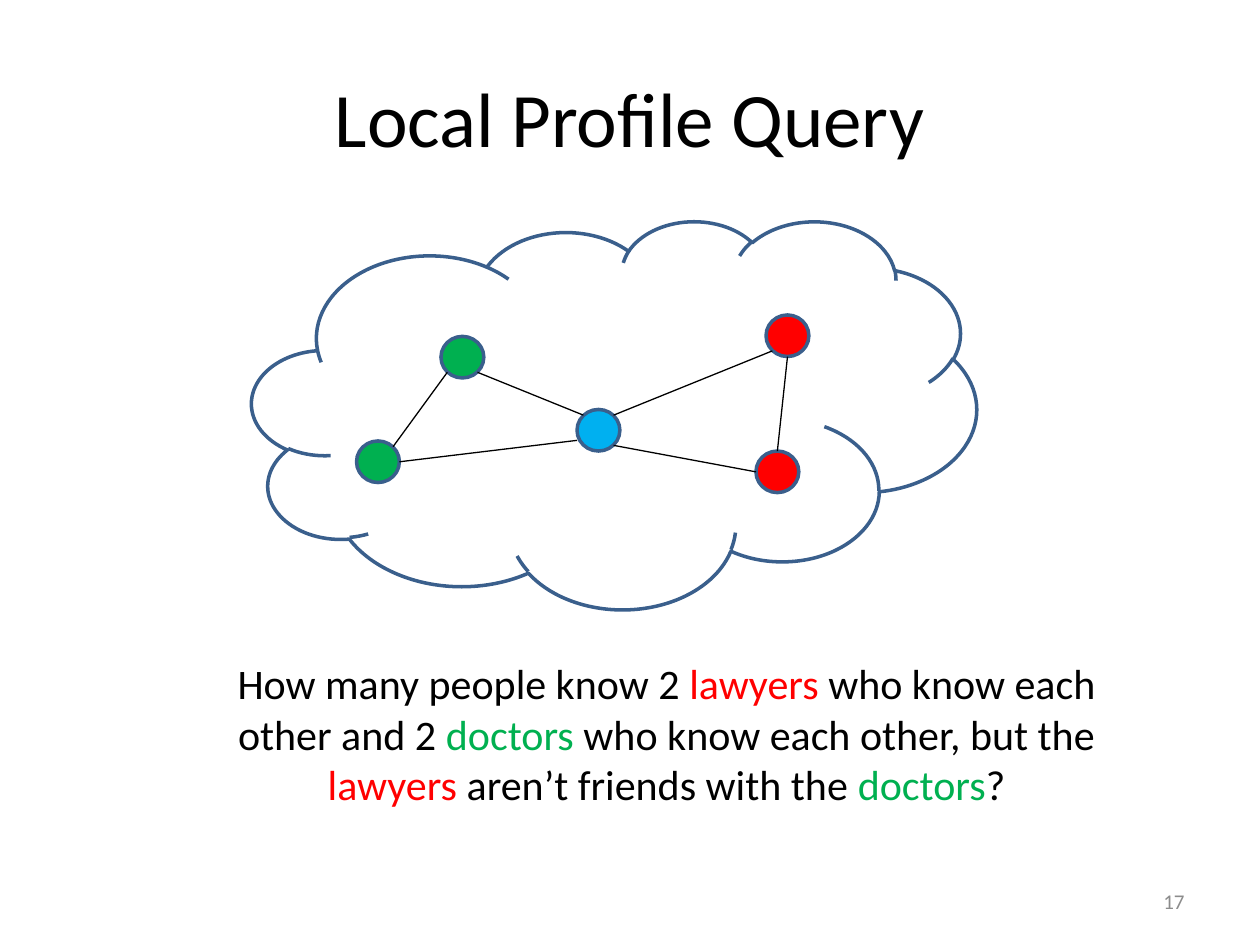
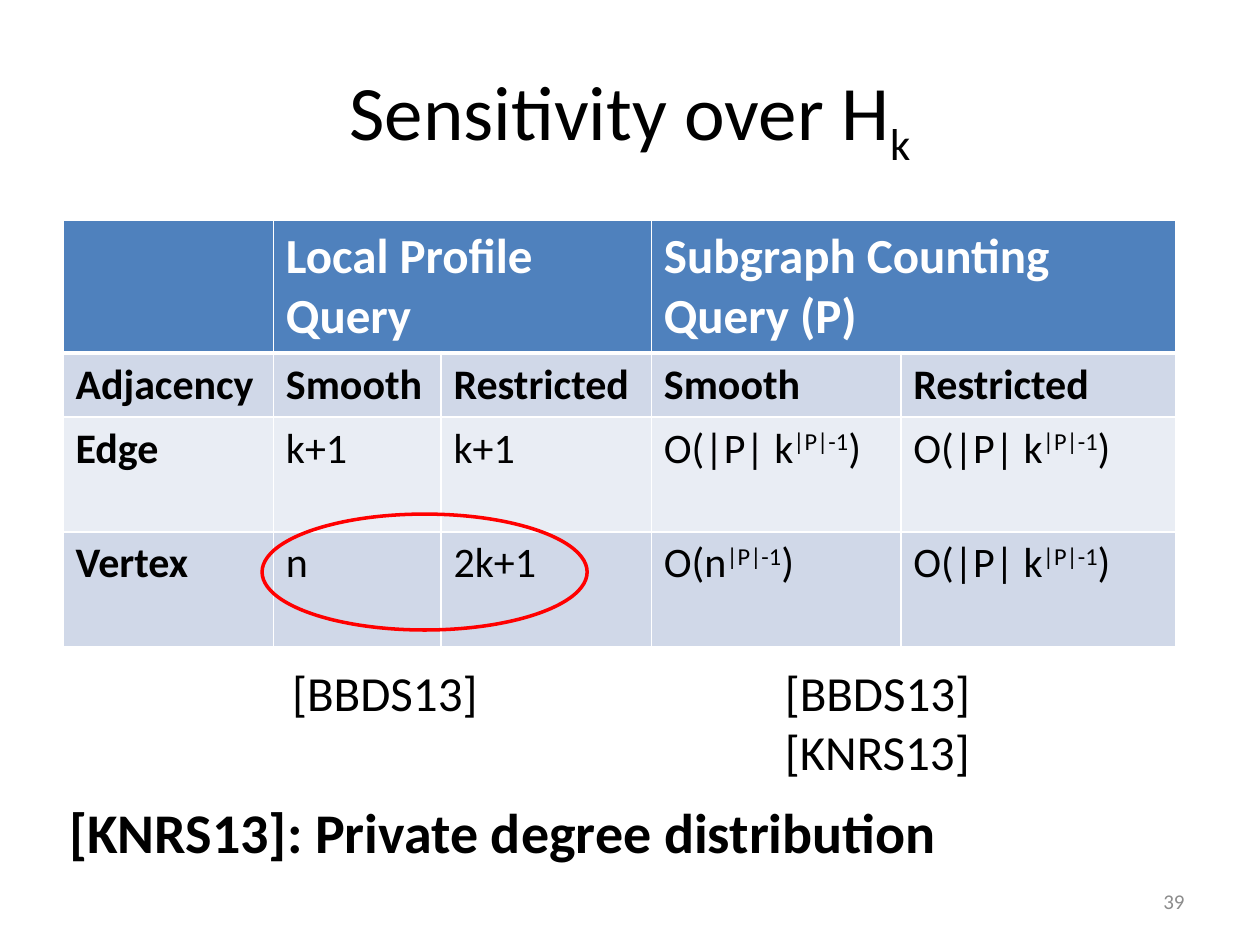
from dataclasses import dataclass

from lxml.etree import SubElement
from pptx import Presentation
from pptx.dml.color import RGBColor
from pptx.enum.shapes import MSO_CONNECTOR as CONN, MSO_SHAPE as SHAPE
from pptx.enum.text import MSO_ANCHOR as ANCHOR, MSO_AUTO_SIZE as FIT, PP_ALIGN as ALIGN
from pptx.oxml.ns import qn
from pptx.util import Pt

EMU_PER_PX = 9144


def px(n):
    return int(n * EMU_PER_PX)


@dataclass(frozen=True)
class Theme:
    font: str = "Calibri"
    black: str = "000000"
    white: str = "FFFFFF"
    red: str = "FF0000"
    green: str = "00B050"
    sky: str = "00B0F0"
    outline: str = "3A5F8C"
    grey: str = "8C8C8C"
    header: str = "4F81BD"
    band_dark: str = "D0D8E8"
    band_light: str = "E9EDF4"
    title: int = 44
    takeaway: int = 32
    large: int = 28
    body: int = 24
    small: int = 12
    shape_line: float = 2
    edge_line: float = 0.75


class Deck:
    def __init__(self, theme):
        self.theme = theme
        self.prs = Presentation()
        self.prs.slide_width, self.prs.slide_height = px(1000), px(750)
        self.slide = None

    def add_runs(self, p, runs, size, color=None, bold=False, align=ALIGN.LEFT):
        p.alignment = align
        for text, style in [(runs, {})] if isinstance(runs, str) else runs:
            r = p.add_run()
            r.text = text
            formats = {"name": self.theme.font, "size": Pt(size), "bold": bold}
            for name, value in formats.items():
                setattr(r.font, name, value)
            r.font.color.rgb = RGBColor.from_string(style.get("color", color or self.theme.black))
            if "base" in style:
                r._r.get_or_add_rPr().set("baseline", str(style["base"] * 1000))

    def add_slide(self, title, number):
        self.slide = self.prs.slides.add_slide(self.prs.slide_layouts[5])
        sp = self.slide.shapes.title
        for name, value in dict(left=50, top=30, width=900, height=125).items():
            setattr(sp, name, px(value))
        sp.text_frame.vertical_anchor = ANCHOR.MIDDLE
        self.add_runs(sp.text_frame.paragraphs[0], title, self.theme.title, align=ALIGN.CENTER)
        self.text((717, 695, 233, 40), [str(number)], self.theme.small, anchor=ANCHOR.MIDDLE,
                  fit=FIT.NONE, color=self.theme.grey, align=ALIGN.RIGHT)

    def text(self, box, lines, size, wrap=True, anchor=ANCHOR.TOP,
             fit=FIT.SHAPE_TO_FIT_TEXT, **style):
        tf = self.slide.shapes.add_textbox(*map(px, box)).text_frame
        for name, value in dict(word_wrap=wrap, auto_size=fit, vertical_anchor=anchor).items():
            setattr(tf, name, value)
        for i, line in enumerate(lines):
            p = tf.add_paragraph() if i else tf.paragraphs[0]
            self.add_runs(p, line, size, **style)

    def shape(self, kind, box, line, fill=None):
        s = self.slide.shapes.add_shape(kind, *map(px, box))
        s.shadow.inherit = False
        if fill:
            s.fill.solid()
            s.fill.fore_color.rgb = RGBColor.from_string(fill)
        else:
            s.fill.background()
        s.line.color.rgb = RGBColor.from_string(line)
        s.line.width = Pt(self.theme.shape_line)

    def line(self, start, end):
        c = self.slide.shapes.add_connector(CONN.STRAIGHT, *map(px, start + end))
        c.line.color.rgb = RGBColor.from_string(self.theme.black)
        c.line.width = Pt(self.theme.edge_line)
        SubElement(c._element.spPr, qn("a:effectLst"))

    def cell(self, cell, fill, borders):
        tcPr = cell._tc.get_or_add_tcPr()
        for side, width in borders.items():
            ln = SubElement(tcPr, qn(f"a:ln{side}"), w=str(int(Pt(width))))
            solid = SubElement(ln, qn("a:solidFill"))
            SubElement(solid, qn("a:srgbClr"), val=self.theme.white)
        cell.fill.solid()
        cell.fill.fore_color.rgb = RGBColor.from_string(fill)

    def table(self, left, top, widths, heights, rows, merges):
        t = self.theme
        box = (left, top, sum(widths), sum(heights))
        table = self.slide.shapes.add_table(len(rows), len(widths), *map(px, box)).table
        for col, width in zip(table.columns, widths):
            col.width = px(width)
        for row, height in zip(table.rows, heights):
            row.height = px(height)
        for i, row in enumerate(rows):
            fill = t.header if i == 0 else t.band_dark if i % 2 else t.band_light
            borders = {"L": 1, "R": 1, "T": 3 if i == 1 else 1, "B": 1 if i else 3}
            for j, runs in enumerate(row):
                cell = table.cell(i, j)
                self.cell(cell, fill, borders)
                if runs:
                    self.add_runs(cell.text_frame.paragraphs[0], runs, t.body if i else t.large,
                                  color=t.black if i else t.white, bold=i < 2 or j == 0)
        for first, last in merges:
            table.cell(*first).merge(table.cell(*last))


def local_profile(deck):
    t = deck.theme
    deck.add_slide("Local Profile Query", 17)
    deck.shape(SHAPE.CLOUD, (200, 175, 575, 308), t.outline, t.white)

    width, height = 34, 33
    nodes = {
        "lawyer_low": (600, 358, t.red),
        "lawyer_high": (608, 250, t.red),
        "person": (458, 325, t.sky),
        "doctor_high": (350, 267, t.green),
        "doctor_low": (283, 350, t.green),
    }
    ports = {
        "top": (0, -16.5), "bottom": (0, 16.5), "left": (-17, 0), "right": (17, 0),
        "top_left": (-12, -12), "top_right": (12, -12),
        "bottom_left": (-12, 12), "bottom_right": (12, 12), "lower_left": (-17, 8),
    }
    edges = [
        ("person", "top_right", "lawyer_high", "bottom_left"),
        ("person", "bottom_right", "lawyer_low", "left"),
        ("person", "top_left", "doctor_high", "bottom_right"),
        ("person", "lower_left", "doctor_low", "right"),
        ("doctor_low", "top_right", "doctor_high", "bottom_left"),
        ("lawyer_low", "top", "lawyer_high", "bottom"),
    ]

    def rim(node, port):
        x, y, _ = nodes[node]
        dx, dy = ports[port]
        return x + width / 2 + dx, y + height / 2 + dy

    for x, y, fill in nodes.values():
        deck.shape(SHAPE.OVAL, (x, y, width, height), t.outline, fill)
    for start, start_port, end, end_port in edges:
        deck.line(rim(start, start_port), rim(end, end_port))

    red, green = {"color": t.red}, {"color": t.green}
    question = [
        ("How many people know 2 ", {}), ("lawyers", red),
        (" who know each other and 2 ", {}), ("doctors", green),
        (" who know each other, but the ", {}), ("lawyers ", red),
        ("aren’t friends with the ", {}), ("doctors", green), ("?", {}),
    ]
    deck.text((150, 517, 758, 131), [question], t.body, align=ALIGN.CENTER)


def sensitivity(deck):
    t = deck.theme
    deck.add_slide([("Sensitivity over H", {}), ("k", {"base": -25})], 39)

    def bound(base):
        return [(f"O({base}", {}), ("|P|-1", {"base": 30}), (")", {})]

    degree_bound = bound("|P| k")
    kinds = ["Smooth", "Restricted"]
    rows = [
        ["", "Local Profile Query", "", "Subgraph Counting Query (P)", ""],
        ["Adjacency", *kinds, *kinds],
        ["Edge", "k+1", "k+1", degree_bound, degree_bound],
        ["Vertex", "n", "2k+1", bound("n"), degree_bound],
    ]
    deck.table(50, 175, [167, 133, 167, 198, 218], [105, 51, 91, 91], rows,
               [((0, 1), (0, 2)), ((0, 3), (0, 4))])
    deck.shape(SHAPE.OVAL, (208, 408, 258, 92), t.red)
    deck.text((613, 521, 169, 104), ["[BBDS13]", "[KNRS13]"], t.large, wrap=False)
    deck.text((222, 521, 169, 57), ["[BBDS13]"], t.large, wrap=False)
    deck.text((45, 628, 715, 64), ["[KNRS13]: Private degree distribution"], t.takeaway,
              wrap=False, bold=True)


def main():
    deck = Deck(Theme())
    local_profile(deck)
    sensitivity(deck)
    deck.prs.save("out.pptx")


if __name__ == "__main__":
    main()
